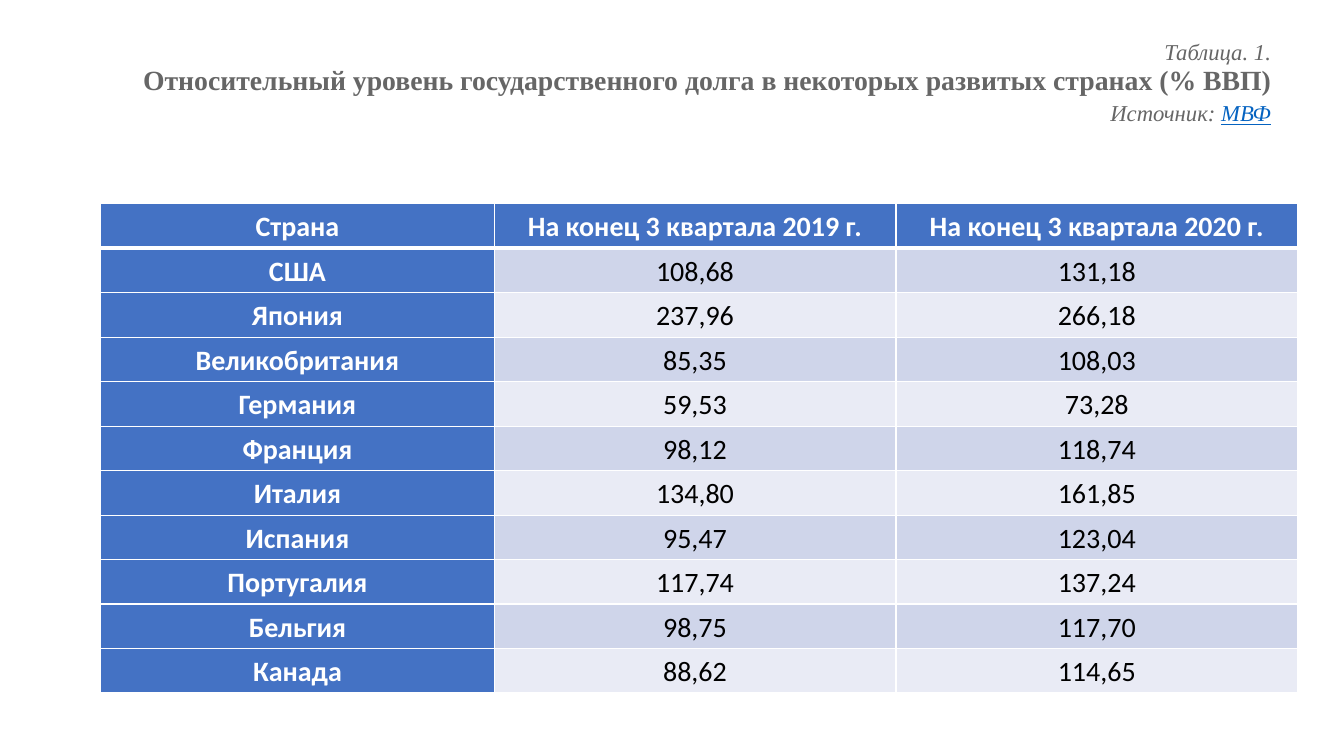
from dataclasses import dataclass

from lxml.etree import SubElement
from pptx import Presentation
from pptx.dml.color import RGBColor
from pptx.enum.text import MSO_ANCHOR as Anchor, PP_ALIGN as Align
from pptx.oxml.ns import qn
from pptx.util import Pt


@dataclass(frozen=True)
class Theme:
    title_font: str = "Times New Roman"
    table_font: str = "Calibri"
    small: float = 16.2
    large: float = 19.8
    cell: float = 20
    grey: str = "666666"
    link: str = "0563C1"
    head: str = "4472C4"
    bands: tuple = ("CFD5EA", "E9EBF5")
    white: str = "FFFFFF"
    black: str = "000000"


class SlideBuilder:
    def __init__(self, deck, theme):
        self.theme = theme
        self.page = deck.slides.add_slide(deck.slide_layouts[5])

    def style(self, span, font, size, color, bold=False, italic=False, underline=False):
        span.font.name, span.font.size = font, Pt(size)
        span.font.color.rgb = RGBColor.from_string(color)
        span.font.bold, span.font.italic = bold, italic
        span.font.underline = underline

    def title(self, lines, left, top, width, height):
        """Each line is a list of (text, size, color, flags) spans."""
        box = self.page.shapes.title
        box.left, box.top, box.width, box.height = map(Pt, (left, top, width, height))
        frame = box.text_frame
        frame.word_wrap = True
        frame.vertical_anchor = Anchor.MIDDLE
        frame.margin_bottom = Pt(25)
        para = frame.paragraphs[0]
        para.alignment = Align.RIGHT
        para.line_spacing = Pt(22)
        for number, line in enumerate(lines):
            if number:
                para.add_line_break()
            for text, size, color, flags in line:
                span = para.add_run()
                span.text = text
                self.style(span, self.theme.title_font, size, color, **flags)

    def border(self, cell, side, weight):
        props = cell._tc.get_or_add_tcPr()
        line = SubElement(props, qn(f"a:{side}"), w=str(Pt(weight)))
        fill = SubElement(line, qn("a:solidFill"))
        SubElement(fill, qn("a:srgbClr"), val=self.theme.white)

    def cell(self, cell, text, row, col):
        theme = self.theme
        header = row == 0 or col == 0
        cell.text = text
        cell.vertical_anchor = Anchor.MIDDLE
        cell.margin_left = cell.margin_right = cell.margin_top = cell.margin_bottom = 0
        para = cell.text_frame.paragraphs[0]
        para.alignment = Align.CENTER
        para.line_spacing, para.space_after = 1.07, Pt(18.8)
        self.style(para.runs[0], theme.table_font, theme.cell,
                   theme.white if header else theme.black, bold=header)
        # Borders come before the fill in the cell properties
        for side in ("lnL", "lnR", "lnT", "lnB"):
            thick = (row, side) in ((0, "lnB"), (1, "lnT"))
            self.border(cell, side, 3 if thick else 1)
        cell.fill.solid()
        cell.fill.fore_color.rgb = RGBColor.from_string(
            theme.head if header else theme.bands[(row - 1) % 2])

    def table(self, rows, left, top, widths, row_height):
        frame = self.page.shapes.add_table(
            len(rows), len(widths), Pt(left), Pt(top),
            Pt(sum(widths)), Pt(row_height * len(rows)))
        for column, width in zip(frame.table.columns, widths):
            column.width = Pt(width)
        for row, values in enumerate(rows):
            frame.table.rows[row].height = Pt(row_height)
            for col, text in enumerate(values):
                self.cell(frame.table.cell(row, col), text, row, col)


DEBT = [
    ("Страна", "На конец 3 квартала 2019 г.", "На конец 3 квартала 2020 г."),
    ("США", "108,68", "131,18"),
    ("Япония", "237,96", "266,18"),
    ("Великобритания", "85,35", "108,03"),
    ("Германия", "59,53", "73,28"),
    ("Франция", "98,12", "118,74"),
    ("Италия", "134,80", "161,85"),
    ("Испания", "95,47", "123,04"),
    ("Португалия", "117,74", "137,24"),
    ("Бельгия", "98,75", "117,70"),
    ("Канада", "88,62", "114,65"),
]


def main():
    deck = Presentation()
    deck.slide_width, deck.slide_height = Pt(960), Pt(540)
    theme = Theme()
    builder = SlideBuilder(deck, theme)

    # Heading with table number and source
    italic = {"italic": True}
    builder.title([
        [("Таблица. 1.", theme.small, theme.grey, italic)],
        [("Относительный уровень государственного долга в некоторых развитых странах (% ВВП)",
          theme.large, theme.grey, {"bold": True})],
        [("Источник: ", theme.small, theme.grey, italic),
         ("МВФ", theme.small, theme.link, {"italic": True, "underline": True})],
    ], left=66, top=49.5, width=849, height=37)

    # Debt by country
    builder.table(DEBT, left=72, top=145.5, widths=(281, 287, 287), row_height=31.8)

    deck.save("out.pptx")


if __name__ == "__main__":
    main()
